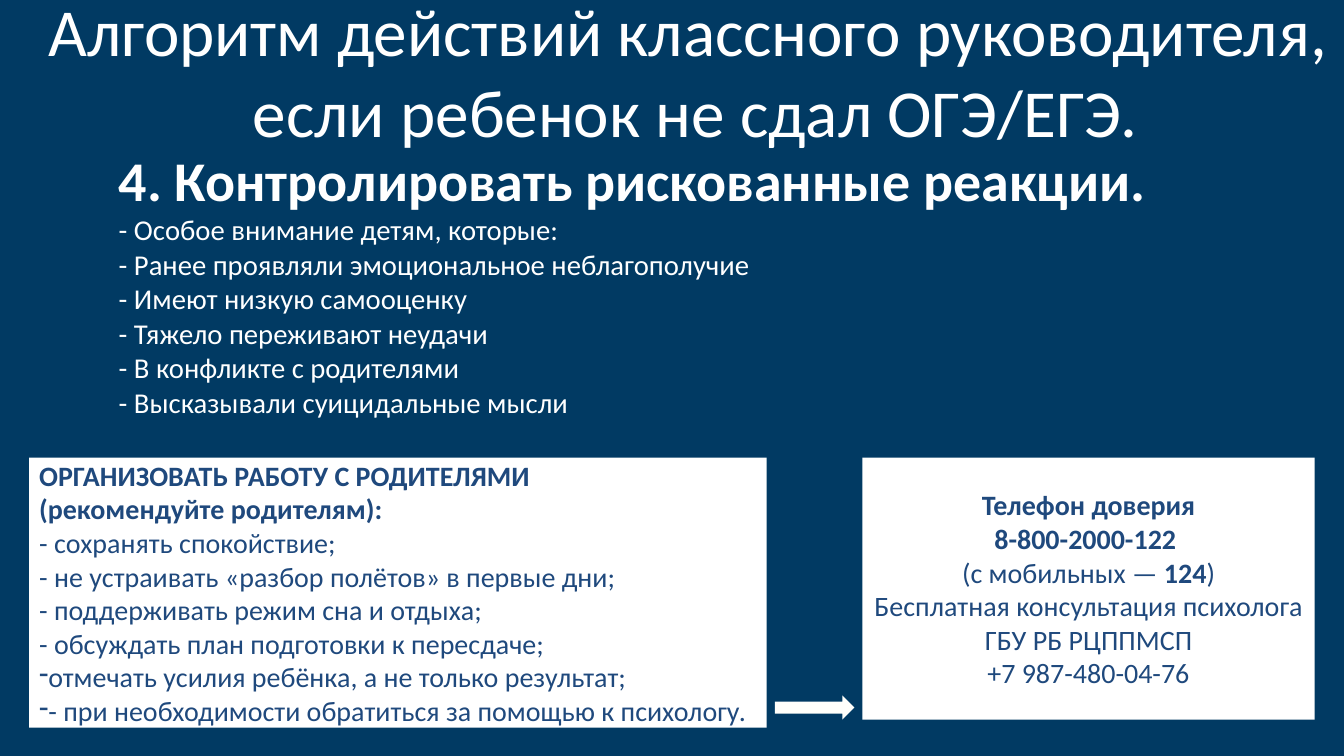
from lxml import etree
from pptx import Presentation, util as u
from pptx.dml.color import RGBColor
from pptx.enum import shapes, text
from pptx.oxml.ns import qn

COLORS = {"background": "013A63", "light": "FFFFFF", "ink": "1F497D", "arrow": "FFFFFB"}
TITLE = "Алгоритм действий классного руководителя, \vесли ребенок не сдал ОГЭ/ЕГЭ."
RISK_HEADING = "4. Контролировать рискованные реакции."
RISK_SIGNS = [
    "- Особое внимание детям, которые:",
    "- Ранее проявляли эмоциональное неблагополучие",
    "- Имеют низкую самооценку",
    "- Тяжело переживают неудачи",
    "- В конфликте с родителями",
    "- Высказывали суицидальные мысли",
]
PARENT_HEADINGS = ["ОРГАНИЗОВАТЬ РАБОТУ С РОДИТЕЛЯМИ", "(рекомендуйте родителям):"]
PARENT_TIPS = [
    "- сохранять спокойствие;",
    "- не устраивать «разбор полётов» в первые дни;",
    "- поддерживать режим сна и отдыха;",
    "- обсуждать план подготовки к пересдаче;",
]
BULLETED_TIPS = [
    "отмечать усилия ребёнка, а не только результат;",
    "- при необходимости обратиться за помощью к психологу.",
]
HELPLINE = [
    [("Телефон доверия", True)],
    [("8-800-2000-122 ", True)],
    [("(с мобильных — ", False), ("124", True), (")", False)],
    [("Бесплатная консультация психолога ГБУ РБ РЦППМСП", False)],
    [("+7 987-480-04-76", False)],
]


def rgb(name):
    """Return the palette colour with this name."""
    return RGBColor.from_string(COLORS[name])


def apply(target, formats):
    """Set each attribute of the target from a dict of format values."""
    for key, value in formats.items():
        setattr(target, key, value)


def add_line(frame, parts, size, color, align=text.PP_ALIGN.LEFT, bullet=None):
    """Append a paragraph made of (wording, bold) parts to the frame."""
    first = frame.paragraphs[0]
    line = first if not first.runs else frame.add_paragraph()
    line.alignment = align
    if bullet:
        props = line._p.get_or_add_pPr()
        apply_indent = {"marL": "0", "indent": "0"}
        for key, value in apply_indent.items():
            props.set(key, value)
        etree.SubElement(props, qn("a:buFontTx"))
        etree.SubElement(props, qn("a:buChar")).set("char", bullet)
    for wording, bold in parts:
        before = len(line.runs)
        pieces = wording.split("\v")
        for number, piece in enumerate(pieces):
            if number:
                line.add_line_break()
            line.add_run().text = piece
        for run in line.runs[before:]:
            apply(run.font, {"name": "Calibri", "size": u.Pt(size), "bold": bold})
            run.font.color.rgb = rgb(color)


def add_block(slide, kind, box, color):
    """Draw a plain filled shape in the box and return it."""
    block = slide.shapes.add_shape(kind, *map(u.Inches, box))
    block.shadow.inherit = False
    block.fill.solid()
    block.fill.fore_color.rgb = rgb(color)
    block.line.fill.background()
    apply(block.text_frame, {"word_wrap": True, "vertical_anchor": text.MSO_ANCHOR.MIDDLE})
    return block


def add_title(slide, box):
    """Place the two-line slide title in the box."""
    frame = slide.shapes.add_textbox(*map(u.Inches, box)).text_frame
    side, edge = u.Inches(0.13), u.Inches(0.07)
    apply(frame, {
        "word_wrap": True, "vertical_anchor": text.MSO_ANCHOR.MIDDLE,
        "margin_left": side, "margin_right": side, "margin_top": edge, "margin_bottom": edge,
    })
    add_line(frame, [(TITLE, False)], 48, "light", text.PP_ALIGN.CENTER)


def add_risks(slide, box):
    """Place the heading and the list of risk signs in the box."""
    frame = slide.shapes.add_textbox(*map(u.Inches, box)).text_frame
    frame.word_wrap = True
    add_line(frame, [(RISK_HEADING, True)], 40, "light")
    for sign in RISK_SIGNS:
        add_line(frame, [(sign, False)], 20.5, "light")


def add_parents(slide, box):
    """Place the panel with advice for parents in the box."""
    frame = add_block(slide, shapes.MSO_SHAPE.RECTANGLE, box, "light").text_frame
    for heading in PARENT_HEADINGS:
        add_line(frame, [(heading, True)], 20, "ink")
    for tip in PARENT_TIPS:
        add_line(frame, [(tip, False)], 20, "ink")
    for tip in BULLETED_TIPS:
        add_line(frame, [(tip, False)], 20, "ink", bullet="-")


def add_helpline(slide, box):
    """Place the helpline panel in the box."""
    frame = add_block(slide, shapes.MSO_SHAPE.RECTANGLE, box, "light").text_frame
    for parts in HELPLINE:
        add_line(frame, parts, 20, "ink", text.PP_ALIGN.CENTER)


def add_panels(slide, box):
    """Place the advice and helpline panels at the ends of the box, joined by an arrow."""
    left, top, width, height = box
    parents_width, helpline_width, gap = 7.32, 4.49, 0.08
    helpline_left = left + width - helpline_width
    arrow_left = left + parents_width + gap
    add_helpline(slide, (helpline_left, top, helpline_width, height - 0.08))
    add_parents(slide, (left, top, parents_width, height))
    arrow_box = (arrow_left, top + 2.36, helpline_left - gap - arrow_left, 0.24)
    add_block(slide, shapes.MSO_SHAPE.RIGHT_ARROW, arrow_box, "arrow")


def main():
    """Build the slide and save it."""
    deck = Presentation()
    apply(deck, {"slide_width": u.Inches(13.34), "slide_height": u.Inches(7.5)})
    slide = deck.slides.add_slide(deck.slide_layouts[6])
    slide.background.fill.solid()
    slide.background.fill.fore_color.rgb = rgb("background")
    add_title(slide, (0.29, 0, 13.23, 1.39))
    add_risks(slide, (1.08, 1.39, 11.58, 2.84))
    add_panels(slide, (0.29, 4.54, 12.76, 2.68))
    deck.save("out.pptx")


if __name__ == "__main__":
    main()
